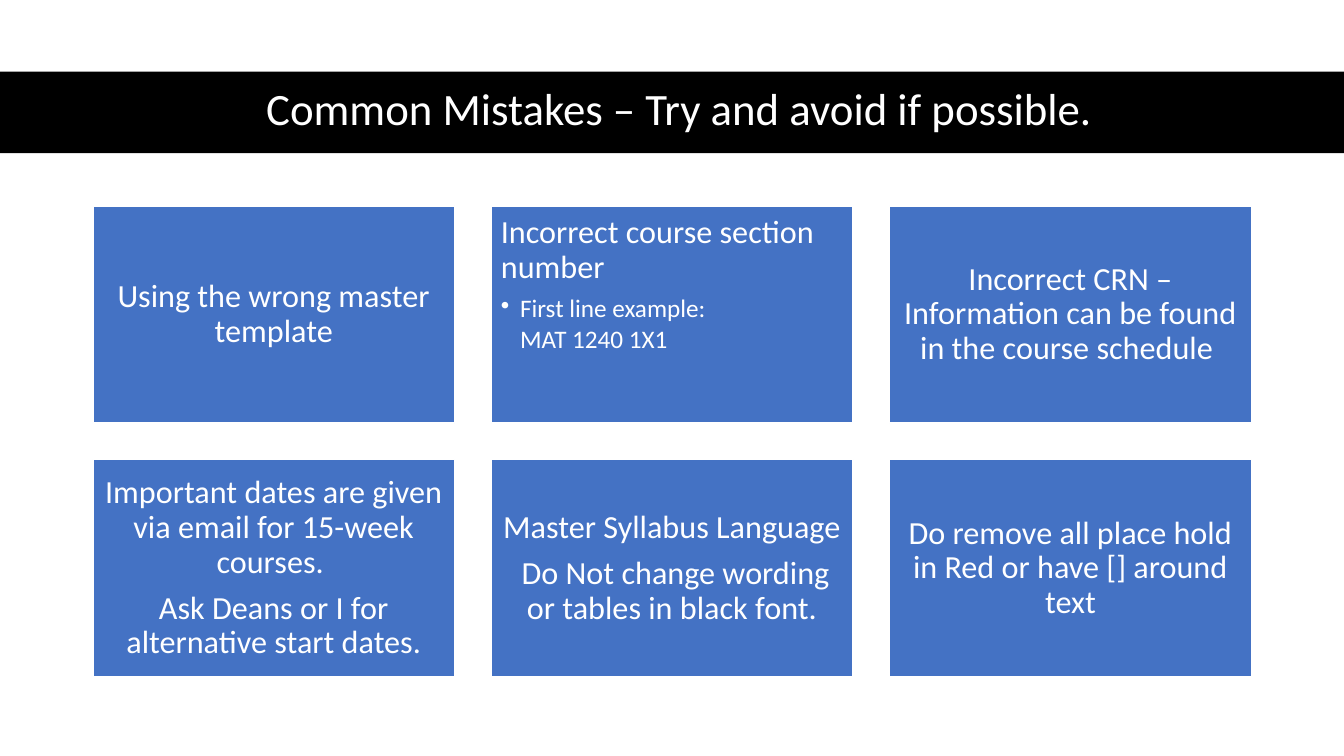
from dataclasses import dataclass

from lxml import etree
from pptx import Presentation
from pptx.dml.color import RGBColor
from pptx.enum.shapes import MSO_SHAPE
from pptx.enum.text import MSO_ANCHOR, PP_ALIGN
from pptx.oxml.ns import qn
from pptx.util import Pt

RECT = MSO_SHAPE.RECTANGLE
TOP, MIDDLE = MSO_ANCHOR.TOP, MSO_ANCHOR.MIDDLE
LEFT, CENTER = PP_ALIGN.LEFT, PP_ALIGN.CENTER


@dataclass(frozen=True)
class Theme:
    font: str = "Calibri"
    black: str = "000000"
    white: str = "FFFFFF"
    blue: str = "4472C4"
    title: float = 32
    body: float = 23
    detail: float = 18


def assign(target, values):
    for name, value in values.items():
        setattr(target, name, value)


class Deck:
    def __init__(self, theme, width, height):
        self.theme = theme
        self.show = Presentation()
        assign(self.show, {"slide_width": Pt(width), "slide_height": Pt(height)})
        self.slide = self.show.slides.add_slide(self.show.slide_layouts[6])

    def box(self, area, fill, line=None):
        shape = self.slide.shapes.add_shape(RECT, *map(Pt, area))
        shape.shadow.inherit = False
        shape.fill.solid()
        shape.fill.fore_color.rgb = RGBColor.from_string(fill)
        if line:
            shape.line.color.rgb = RGBColor.from_string(line)
            shape.line.width = Pt(1)
        else:
            shape.line.fill.background()
        return shape

    def para(self, para, text, size, align, after=0):
        para.text = text
        assign(para, {"alignment": align, "line_spacing": 0.9,
                      "space_before": Pt(0), "space_after": Pt(after)})
        assign(para.font, {"name": self.theme.font, "size": Pt(size)})
        para.font.color.rgb = RGBColor.from_string(self.theme.white)

    def indent(self, para, level, mark):
        """Set a hanging indent, with a bullet if mark is given."""
        step = Pt(13.7)
        para.level = level
        props = para._p.get_or_add_pPr()
        props.set("marL", str(step * level))
        props.set("indent", str(-step))
        if mark:
            etree.SubElement(props, qn("a:buChar")).set("char", mark)
        else:
            etree.SubElement(props, qn("a:buNone"))

    def title(self, area, text):
        frame = self.slide.shapes.add_textbox(*map(Pt, area)).text_frame
        assign(frame, {"word_wrap": True, "vertical_anchor": MIDDLE})
        self.para(frame.paragraphs[0], text, self.theme.title, CENTER)

    def card(self, area, texts, details=()):
        """Draw a card; details are (mark, text) pairs, each a level deeper."""
        frame = self.box(area, self.theme.blue, self.theme.white).text_frame
        inset = Pt(6.9)
        assign(frame, {"word_wrap": True,
                       "vertical_anchor": TOP if details else MIDDLE,
                       "margin_left": inset, "margin_right": inset,
                       "margin_top": inset, "margin_bottom": inset})
        align = LEFT if details else CENTER
        for i, text in enumerate(texts):
            para = frame.add_paragraph() if i else frame.paragraphs[0]
            self.para(para, text, self.theme.body, align, 8)
        for level, (mark, text) in enumerate(details, 1):
            para = frame.add_paragraph()
            self.para(para, text, self.theme.detail, align, 2.7)
            self.indent(para, level, mark)


CARDS = [
    (["Using the wrong master template"],),
    (["Incorrect course section number"],
     [("•", "First line example:"), (None, "MAT 1240 1X1")]),
    (["Incorrect CRN – Information can be found in the course schedule "],),
    (["Important dates are given via email for 15-week courses. ",
      "Ask Deans or I for alternative start dates."],),
    (["Master Syllabus Language",
      " Do Not change wording or tables in black font."],),
    (["Do remove all place hold in Red or have [] around text"],),
]


def main():
    theme = Theme()
    deck = Deck(theme, 960, 540)
    deck.box((0, 51.2, 960, 58.2), theme.black)
    deck.title((43.9, 50.4, 882.7, 58.3),
               "Common Mistakes – Try and avoid if possible.")
    for i, card in enumerate(CARDS):
        row, col = divmod(i, 3)
        deck.card((66.4 + col * 284.5, 147 + row * 181.4, 258.5, 155.2), *card)
    deck.show.save("out.pptx")


if __name__ == "__main__":
    main()
